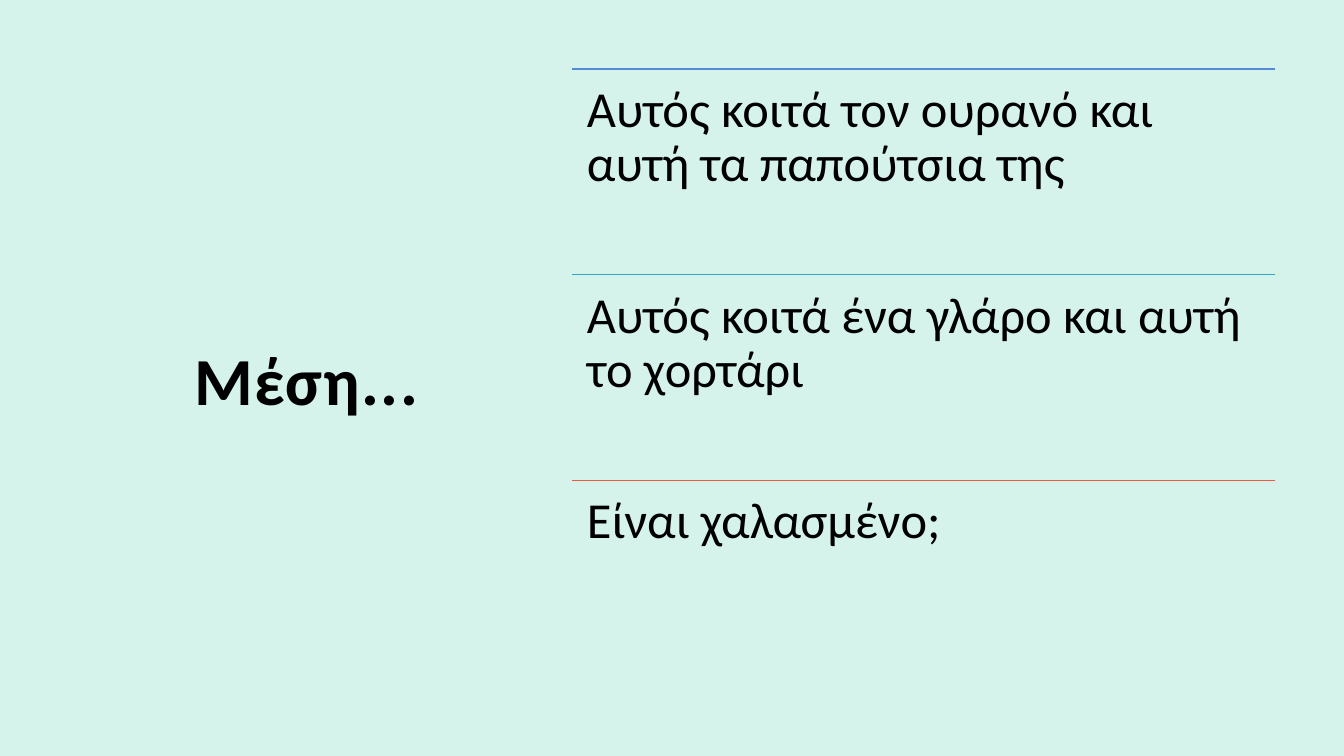
from dataclasses import dataclass

from pptx import Presentation
from pptx.dml.color import RGBColor as RGB
from pptx.enum.shapes import MSO_CONNECTOR as Conn, MSO_SHAPE as Shape
from pptx.enum.text import MSO_ANCHOR as Anchor, PP_ALIGN as Align
from pptx.oxml.ns import qn
from pptx.util import Pt
from lxml.etree import SubElement

WIDE, HIGH = 1344, 756
SCALE = 12192000 / WIDE


@dataclass(frozen=True)
class Theme:
    font: str = "Calibri"
    back: str = "D5F2EB"
    ink: str = "000000"
    rules: tuple = ("528BD6", "31A7C7", "F15843")
    head: int = 48
    body: int = 36


THEME = Theme()
TITLE = "Μέση..."
LINES = (
    "Αυτός κοιτά τον ουρανό και αυτή τα παπούτσια της",
    "Αυτός κοιτά ένα γλάρο και αυτή το χορτάρι",
    "Είναι χαλασμένο;",
)


def px(num):
    return round(num * SCALE)


def add_text(slide, box, text, size, pad, anchor):
    frame = slide.shapes.add_textbox(*map(px, box)).text_frame
    frame.word_wrap = True
    frame.vertical_anchor = anchor
    frame.margin_left = frame.margin_right = px(pad[0])
    frame.margin_top = frame.margin_bottom = px(pad[1])
    para = frame.paragraphs[0]
    para.add_run().text = text
    para.font.name = THEME.font
    para.font.size = Pt(size)
    para.font.color.rgb = RGB.from_string(THEME.ink)
    return para


def add_rule(slide, left, top, width, color):
    rule = slide.shapes.add_connector(
        Conn.STRAIGHT, px(left), px(top), px(left + width), px(top))
    rule.line.color.rgb = RGB.from_string(color)
    rule.line.width = Pt(1)
    SubElement(rule._element.spPr, qn("a:effectLst"))


# Full-slide colour panel
def add_back(slide, box):
    color = RGB.from_string(THEME.back)
    slide.background.fill.solid()
    slide.background.fill.fore_color.rgb = color
    panel = slide.shapes.add_shape(Shape.RECTANGLE, *map(px, box))
    panel.shadow.inherit = False
    panel.fill.solid()
    panel.fill.fore_color.rgb = color
    panel.line.fill.background()


# Title, centred in the left column
def add_title(slide, box):
    para = add_text(slide, box, TITLE, THEME.head, (10, 5), Anchor.MIDDLE)
    para.alignment = Align.CENTER
    para.font.bold = True
    para.runs[0]._r.get_or_add_rPr().set("spc", "100")


# Equal rows, each under a coloured rule
def add_list(slide, box):
    left, top, width, height = box
    step = height / len(LINES)
    for row, (text, color) in enumerate(zip(LINES, THEME.rules)):
        y = top + row * step
        add_rule(slide, left, y, width, color)
        para = add_text(slide, (left, y, width, step), text,
                        THEME.body, (15, 15), Anchor.TOP)
        para.line_spacing = 0.9


def main():
    deck = Presentation()
    deck.slide_width, deck.slide_height = px(WIDE), px(HIGH)
    slide = deck.slides.add_slide(deck.slide_layouts[6])
    add_back(slide, (0, 0, WIDE, HIGH))
    add_title(slide, (98, 108, 417, 541))
    add_list(slide, (572, 69, 703, 617))
    deck.save("out.pptx")


if __name__ == "__main__":
    main()
